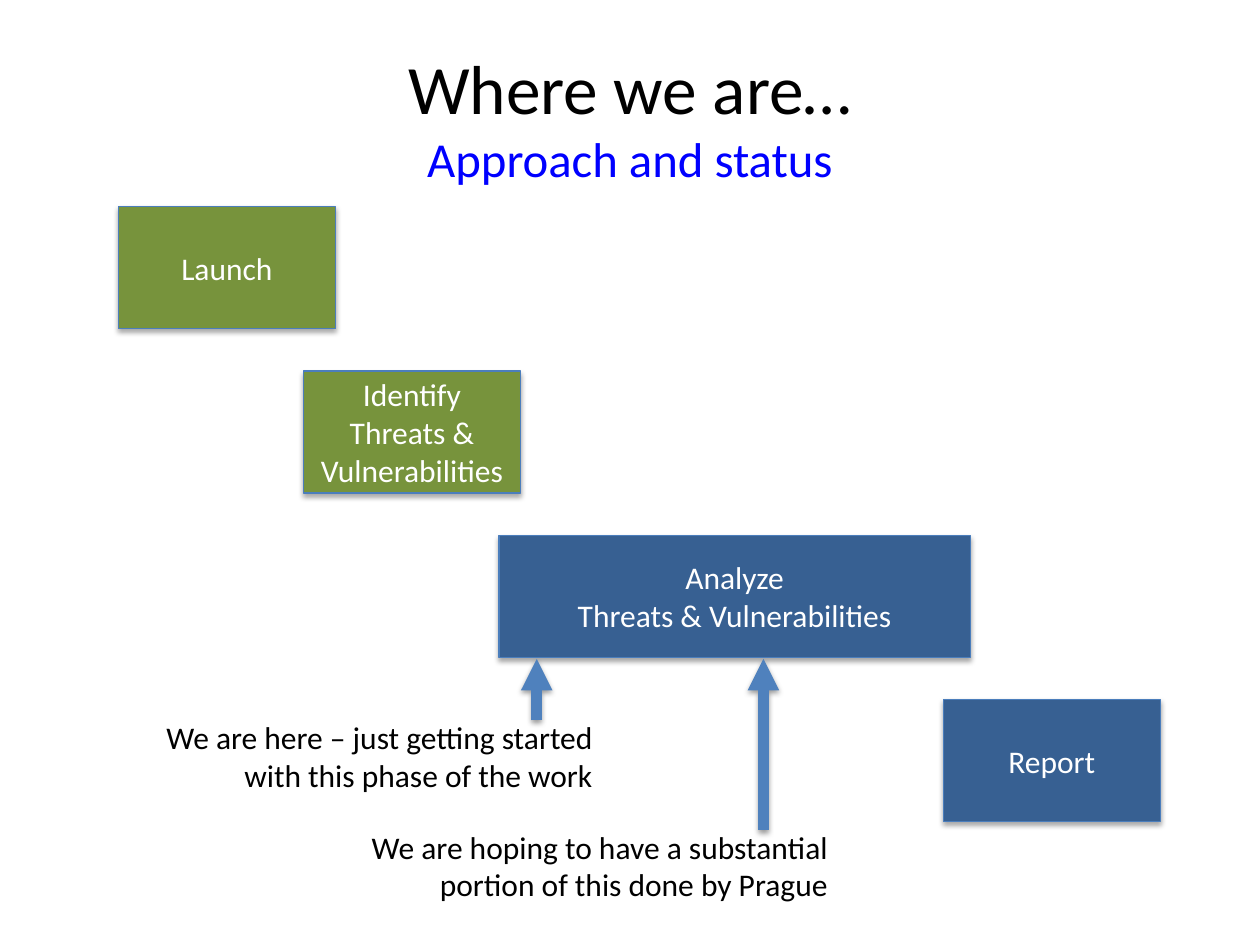
from dataclasses import dataclass

from lxml.etree import SubElement
from pptx import Presentation
from pptx.dml.color import RGBColor
from pptx.enum.shapes import MSO_CONNECTOR as Connector, MSO_SHAPE as Preset
from pptx.enum.text import MSO_ANCHOR as Anchor, PP_ALIGN as Align
from pptx.oxml.ns import qn
from pptx.util import Cm, Pt


@dataclass(frozen=True)
class Theme:
    font: str = "Calibri"
    title_size: float = 39.6
    subtitle_size: float = 27.9
    body_size: float = 18
    ink: str = "000000"
    accent: str = "0000FF"
    light: str = "FFFFFF"
    done: str = "77933C"
    pending: str = "376092"
    border: str = "4B7EBC"
    arrow: str = "4F81BD"


THEME = Theme()

TITLE = "Where we are…"
SUBTITLE = "Approach and status"
PHASES = [
    ("Launch", 2.39, 4.37, THEME.done),
    ("Identify Threats & Vulnerabilities", 6.12, 4.37, THEME.done),
    ("Analyze\nThreats & Vulnerabilities", 10.06, 9.5, THEME.pending),
    ("Report", 19.02, 4.37, THEME.pending),
]
NOTES = [
    ("We are here – just getting started with this phase of the work",
     2.57, 14.35, 9.63, 10.82),
    ("We are hoping to have a substantial portion of this done by Prague",
     5.64, 16.56, 11.3, 15.39),
]
PHASE_TOP, PHASE_STEP, PHASE_HEIGHT = 4.17, 3.31, 2.46
NOTE_HEIGHT, ARROW_OVERLAP = 1.8, 0.17
ARROW_TIP = PHASE_TOP + 2 * PHASE_STEP + PHASE_HEIGHT + 0.03


def format_run(run, size, color):
    run.font.name = THEME.font
    run.font.size = Pt(size)
    run.font.color.rgb = RGBColor.from_string(color)


def fill_text(shape, text, align, anchor, formats):
    text_frame = shape.text_frame
    text_frame.text = text
    text_frame.word_wrap = True
    text_frame.vertical_anchor = anchor
    for paragraph in text_frame.paragraphs:
        paragraph.alignment = align
        for index, run in enumerate(paragraph.runs):
            format_run(run, *formats[index])


def add_shadow(shape, distance, opacity):
    effects = SubElement(shape._element.spPr, qn("a:effectLst"))
    shadow = SubElement(effects, qn("a:outerShdw"), blurRad=str(Pt(3.1)),
                        dist=str(Pt(distance)), dir="5400000", rotWithShape="0")
    color = SubElement(shadow, qn("a:srgbClr"), val="000000")
    SubElement(color, qn("a:alpha"), val=str(opacity * 1000))


def add_label(slide, box, text, align, anchor, formats):
    label = slide.shapes.add_textbox(*map(Cm, box))
    fill_text(label, text, align, anchor, formats)


def add_phase(slide, top, text, left, width, color):
    phase = slide.shapes.add_shape(
        Preset.RECTANGLE, Cm(left), Cm(top), Cm(width), Cm(PHASE_HEIGHT))
    phase.fill.solid()
    phase.fill.fore_color.rgb = RGBColor.from_string(color)
    phase.line.color.rgb = RGBColor.from_string(THEME.border)
    phase.line.width = Pt(0.75)
    add_shadow(phase, 1.8, 35)
    fill_text(phase, text, Align.CENTER, Anchor.MIDDLE,
              [(THEME.body_size, THEME.light)])


def add_arrow(slide, x, start, end):
    arrow = slide.shapes.add_connector(
        Connector.STRAIGHT, Cm(x), Cm(start), Cm(x), Cm(end))
    arrow.line.color.rgb = RGBColor.from_string(THEME.arrow)
    arrow.line.width = Pt(6)
    SubElement(arrow.line._get_or_add_ln(), qn("a:tailEnd"), type="triangle")
    add_shadow(arrow, 1.6, 38)


def main():
    presentation = Presentation()
    presentation.slide_width, presentation.slide_height = Cm(25.4), Cm(19.05)
    slide = presentation.slides.add_slide(presentation.slide_layouts[6])

    add_label(slide, (1.27, 0.76, 22.86, 3.18), f"{TITLE}\v{SUBTITLE}",
              Align.CENTER, Anchor.MIDDLE,
              [(THEME.title_size, THEME.ink), (THEME.subtitle_size, THEME.accent)])

    for index, phase in enumerate(PHASES):
        add_phase(slide, PHASE_TOP + index * PHASE_STEP, *phase)

    for text, left, top, width, arrow_x in NOTES:
        add_label(slide, (left, top, width, NOTE_HEIGHT), text,
                  Align.RIGHT, Anchor.TOP, [(THEME.body_size, THEME.ink)])
        add_arrow(slide, arrow_x, top + ARROW_OVERLAP, ARROW_TIP)

    presentation.save("out.pptx")


if __name__ == "__main__":
    main()
